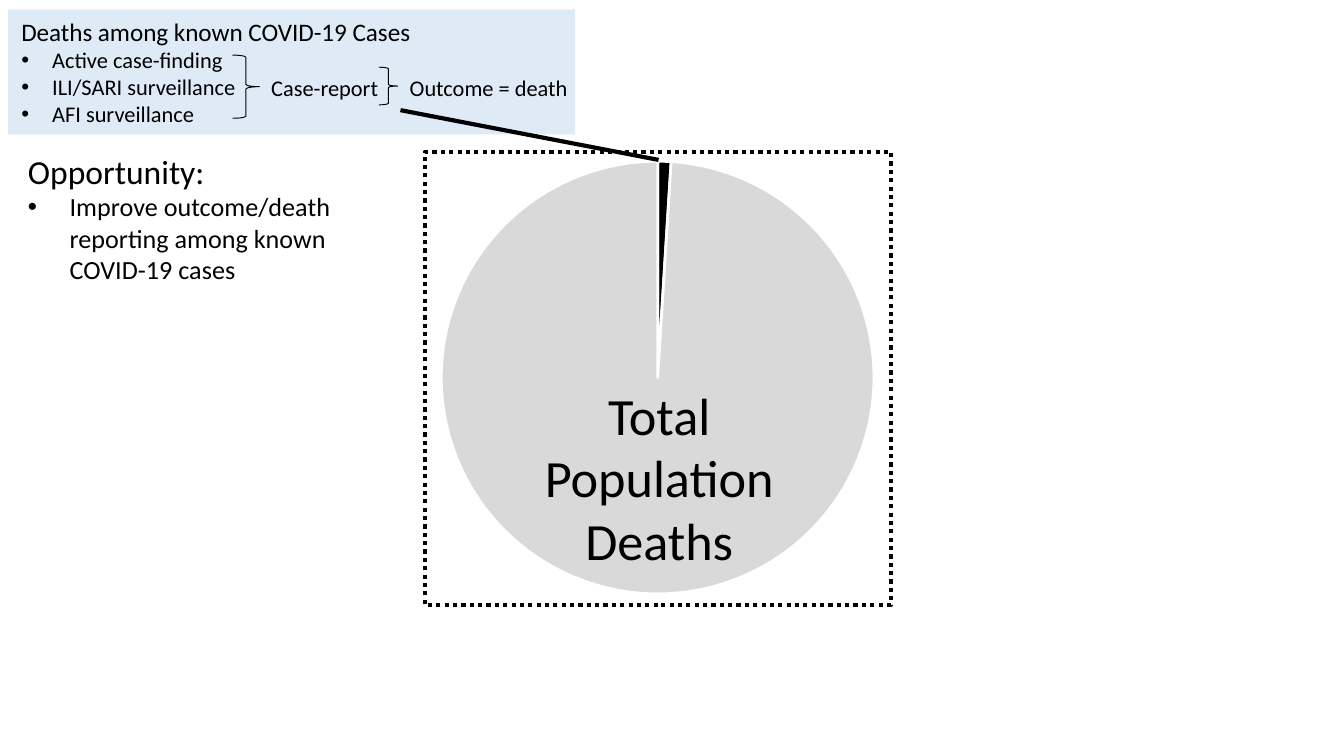
from lxml import etree
from pptx import Presentation
from pptx.chart.data import CategoryChartData
from pptx.dml.color import RGBColor
from pptx.enum.chart import XL_CHART_TYPE
from pptx.enum.dml import MSO_LINE
from pptx.enum.shapes import MSO_CONNECTOR, MSO_SHAPE
from pptx.enum.text import MSO_ANCHOR, MSO_AUTO_SIZE, PP_ALIGN
from pptx.oxml import parse_xml
from pptx.oxml.ns import nsdecls, qn
from pptx.util import Inches, Pt

PIE = XL_CHART_TYPE.PIE
DOT = MSO_LINE.ROUND_DOT
LINE = MSO_CONNECTOR.STRAIGHT
RECT = MSO_SHAPE.RECTANGLE
BRACE = MSO_SHAPE.LEFT_BRACE
TOP = MSO_ANCHOR.TOP
GROW = MSO_AUTO_SIZE.SHAPE_TO_FIT_TEXT
LEFT = PP_ALIGN.LEFT
CENTER = PP_ALIGN.CENTER
FONT = "Calibri"
BLACK = "000000"
WHITE = "FFFFFF"


def color(code):
    return RGBColor.from_string(code)


def place(box, x, y, w, h):
    return [Inches(n) for n in (box[0] + x, box[1] + y, w, h)]


def stroke(line, width, code=BLACK):
    line.color.rgb = color(code)
    line.width = Pt(width)


def shape(slide, kind, spot, fill=None, width=None):
    item = slide.shapes.add_shape(kind, *spot)
    item.shadow.inherit = False
    if fill:
        item.fill.solid()
        item.fill.fore_color.rgb = color(fill)
    else:
        item.fill.background()
    if width:
        stroke(item.line, width)
    else:
        item.line.fill.background()
    return item


def bullet(para, indent):
    props = para._p.get_or_add_pPr()
    props.set("marL", str(Inches(indent)))
    props.set("indent", str(-Inches(indent)))
    etree.SubElement(props, qn("a:buFont")).set("typeface", "Arial")
    etree.SubElement(props, qn("a:buChar")).set("char", "•")


def write(item, rows, align=LEFT, wrap=True):
    frame = item.text_frame
    frame.word_wrap = wrap
    frame.auto_size = GROW
    frame.vertical_anchor = TOP
    for i, (text, size, indent) in enumerate(rows):
        para = frame.paragraphs[0] if i == 0 else frame.add_paragraph()
        para.alignment = align
        if indent:
            bullet(para, indent)
        run = para.add_run()
        run.text = text
        run.font.name = FONT
        run.font.size = Pt(size)
        run.font.color.rgb = color(BLACK)


def label(slide, spot, rows, align=LEFT, wrap=True):
    write(slide.shapes.add_textbox(*spot), rows, align, wrap)


def known(slide, box):
    panel = shape(slide, RECT, place(box, 0, 0, *box[2:]), "DEEBF7")
    items = ["Active case-finding", "ILI/SARI surveillance", "AFI surveillance"]
    write(panel, [("Deaths among known COVID-19 Cases", 13.5, 0)]
          + [(text, 12, 0.23) for text in items])
    for x, y, w, h in [(1.67, 0.34, 0.2, 0.47), (2.76, 0.43, 0.14, 0.28)]:
        brace = shape(slide, BRACE, place(box, x, y, w, h), width=0.5)
        brace.rotation = 180
    for text, x, w in [("Case-report", 1.86, 1), ("Outcome = death", 2.89, 1.39)]:
        label(slide, place(box, x, 0.43, w, 0.3), [(text, 12, 0)], wrap=False)


def deaths(slide, box):
    data = CategoryChartData()
    data.categories = ["1", "2", "3", ""]
    data.add_series("Series 1", [1, None, None, 99])
    spot = place(box, 0, 0, *box[2:])
    chart = slide.shapes.add_chart(PIE, *spot, data).chart
    chart.has_legend = False
    chart.has_title = False
    chart.font.name = FONT
    chart.font.size = Pt(10)
    chart.font.color.rgb = color(BLACK)
    plot = chart.plots[0]
    plot.vary_by_categories = True
    for i, code in enumerate([BLACK, "808080", "BFBFBF", "D9D9D9"]):
        part = plot.series[0].points[i].format
        part.fill.solid()
        part.fill.fore_color.rgb = color(code)
        stroke(part.line, 1.5, WHITE)
    size = 3.22
    w, h = size / box[2], size / box[3]
    area = chart._chartSpace.chart.plotArea
    for old in area.findall(qn("c:layout")):
        area.remove(old)
    area.insert(0, parse_xml(
        f'<c:layout {nsdecls("c")}><c:manualLayout>'
        '<c:layoutTarget val="inner"/><c:xMode val="edge"/><c:yMode val="edge"/>'
        f'<c:x val="{(1 - w) / 2:.3f}"/><c:y val="{(1 - h) / 2:.3f}"/>'
        f'<c:w val="{w:.3f}"/><c:h val="{h:.3f}"/>'
        '</c:manualLayout></c:layout>'))
    frame = shape(slide, RECT, place(box, 0.04, 0.07, 3.47, 3.37), width=2.25)
    frame.line.dash_style = DOT
    label(slide, place(box, 0.7, 1.74, 2.17, 1.51),
          [("Total Population Deaths", 28, 0)], CENTER)


def chance(slide, box):
    label(slide, place(box, 0, 0, *box[2:]), [
        ("Opportunity:", 18, 0),
        ("Improve outcome/death reporting among known COVID-19 cases", 14, 0.31),
    ])


def leader(slide, start, end):
    line = slide.shapes.add_connector(LINE, *[Inches(n) for n in start + end])
    stroke(line.line, 2.25)
    etree.SubElement(line._element.spPr, qn("a:effectLst"))


def main():
    deck = Presentation()
    deck.slide_width = Inches(10)
    deck.slide_height = Inches(10 * 9 / 16)
    slide = deck.slides.add_slide(deck.slide_layouts[6])
    known(slide, (0.06, 0.07, 4.22, 0.93))
    deaths(slide, (3.12, 1.06, 3.55, 3.5))
    chance(slide, (0.11, 1.07, 2.52, 1.11))
    leader(slide, (2.98, 0.82), (4.9, 1.19))
    deck.save("out.pptx")


if __name__ == "__main__":
    main()
